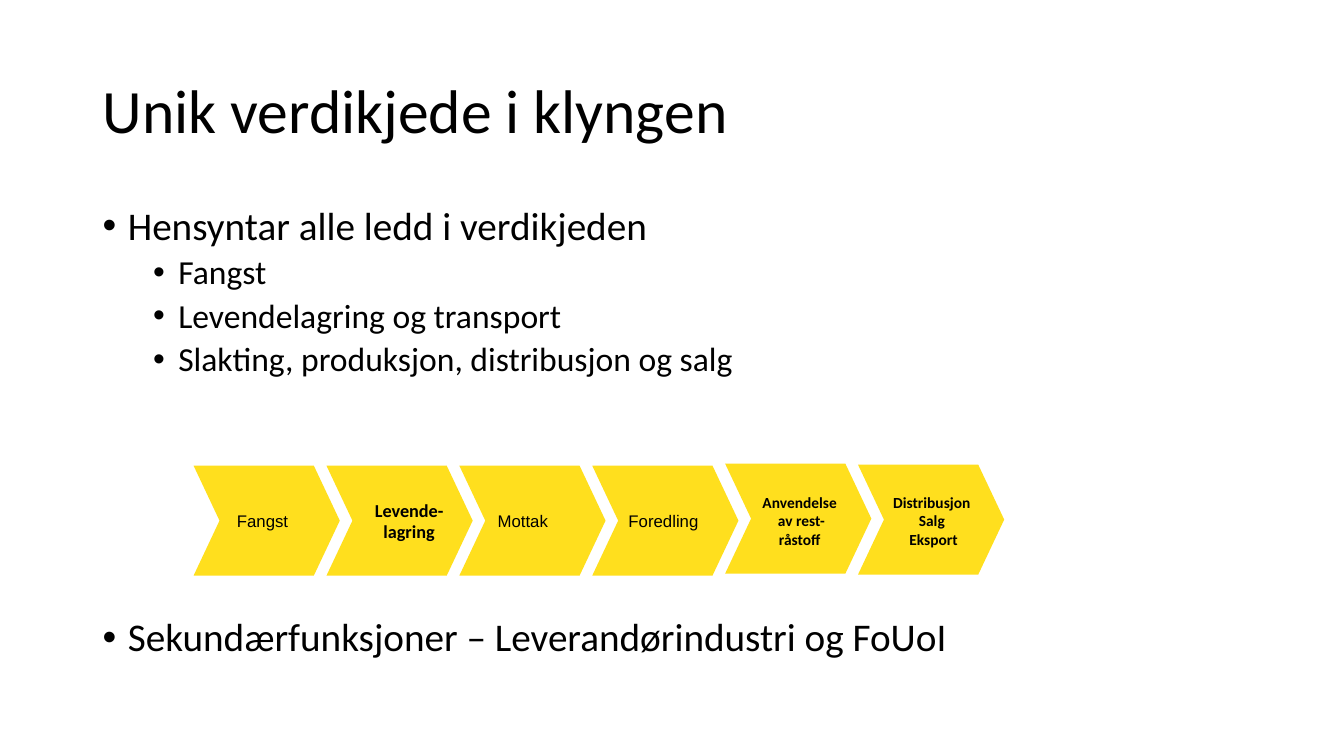
from dataclasses import dataclass

from lxml.etree import SubElement
from pptx import Presentation
from pptx.dml.color import RGBColor
from pptx.enum.shapes import MSO_SHAPE
from pptx.enum.text import MSO_ANCHOR, PP_ALIGN
from pptx.oxml.ns import qn
from pptx.util import Inches, Pt


@dataclass(frozen=True)
class Theme:
    ink: RGBColor = RGBColor(0x00, 0x00, 0x00)
    chevron: RGBColor = RGBColor(0xFF, 0xDF, 0x1E)
    font: str = "Calibri"
    plain_font: str = "Arial"
    title: int = 44
    levels: tuple = (28, 24)
    space_before: tuple = (10, 5)
    line_spacing: float = 0.9


THEME = Theme()

# Label lines, type size, bold, label left within its chevron, label width, lift
CHAIN_STEPS = [
    (["Fangst"], 12, False, 0.37, 0.8, 0),
    (["Levende-", "lagring"], 13, True, 0.37, 0.9, 0),
    (["Mottak"], 12, False, 0.32, 0.8, 0),
    (["Foredling"], 12, False, 0.3, 1, 0),
    (["Anvendelse", " av rest-", "råstoff"], 11, True, 0.24, 1, 0.02),
    (["Distribusjon ", "Salg ", "Eksport"], 11, True, 0.07, 1.36, 0.01),
]


def add_frame(slide, left, top, width, height, anchor=MSO_ANCHOR.TOP):
    box = slide.shapes.add_textbox(
        Inches(left), Inches(top), Inches(width), Inches(height))
    frame = box.text_frame
    frame.word_wrap = True
    frame.vertical_anchor = anchor
    return frame


def next_paragraph(frame, index):
    return frame.add_paragraph() if index else frame.paragraphs[0]


def add_run(paragraph, text, size, font=THEME.font, bold=False):
    run = paragraph.add_run()
    run.text = text
    run.font.name = font
    run.font.size = Pt(size)
    run.font.bold = bold
    run.font.color.rgb = THEME.ink


def add_title(slide, left, top, width, height, text):
    frame = add_frame(slide, left, top, width, height, MSO_ANCHOR.MIDDLE)
    heading = frame.paragraphs[0]
    heading.line_spacing = THEME.line_spacing
    add_run(heading, text, THEME.title)


def add_bullets(slide, left, top, width, height, points):
    frame = add_frame(slide, left, top, width, height)
    for index, (level, text) in enumerate(points):
        point = next_paragraph(frame, index)
        point.level = level
        point.line_spacing = THEME.line_spacing
        if index:
            point.space_before = Pt(THEME.space_before[level])
        # Hanging bullet
        properties = point._p.get_or_add_pPr()
        properties.set("marL", str(Inches(0.25 + 0.5 * level)))
        properties.set("indent", str(Inches(-0.25)))
        SubElement(properties, qn("a:buFont"), typeface="Arial")
        SubElement(properties, qn("a:buChar"), char="•")
        add_run(point, text, THEME.levels[level])


def add_label(slide, left, top, width, height, lines, size, bold):
    frame = add_frame(slide, left, top, width, height, MSO_ANCHOR.MIDDLE)
    frame.margin_left = frame.margin_right = Inches(0.06)
    frame.margin_top = frame.margin_bottom = Inches(0.06)
    for index, line in enumerate(lines):
        paragraph = next_paragraph(frame, index)
        paragraph.alignment = PP_ALIGN.CENTER if bold else PP_ALIGN.LEFT
        add_run(paragraph, line, size, THEME.font if bold else THEME.plain_font, bold)


def add_value_chain(slide, left, top, width, height, steps):
    chevron_width = 1.45
    pitch = (width - chevron_width) / (len(steps) - 1)
    for index, (lines, size, bold, label_left, label_width, lift) in enumerate(steps):
        step_left = left + index * pitch
        chevron = slide.shapes.add_shape(
            MSO_SHAPE.CHEVRON, Inches(step_left), Inches(top - lift),
            Inches(chevron_width), Inches(height))
        chevron.adjustments[0] = 0.236
        chevron.shadow.inherit = False
        chevron.fill.solid()
        chevron.fill.fore_color.rgb = THEME.chevron
        chevron.line.fill.background()
        add_label(slide, step_left + label_left, top, label_width, height,
                  lines, size, bold)


def build_slide(prs):
    slide = prs.slides.add_slide(prs.slide_layouts[6])
    left, width = 0.92, 11.5
    add_title(slide, left, 0.4, width, 1.45, "Unik verdikjede i klyngen")
    add_bullets(slide, left, 2, width, 2, [
        (0, "Hensyntar alle ledd i verdikjeden"),
        (1, "Fangst"),
        (1, "Levendelagring og transport"),
        (1, "Slakting, produksjon, distribusjon og salg"),
    ])
    add_value_chain(slide, 1.92, 4.62, 8.04, 1.09, CHAIN_STEPS)
    add_bullets(slide, left, 6.08, width, 0.6, [
        (0, "Sekundærfunksjoner – Leverandørindustri og FoUoI"),
    ])


def main():
    prs = Presentation()
    prs.slide_width, prs.slide_height = Inches(13.33), Inches(7.5)
    build_slide(prs)
    prs.save("out.pptx")


if __name__ == "__main__":
    main()
